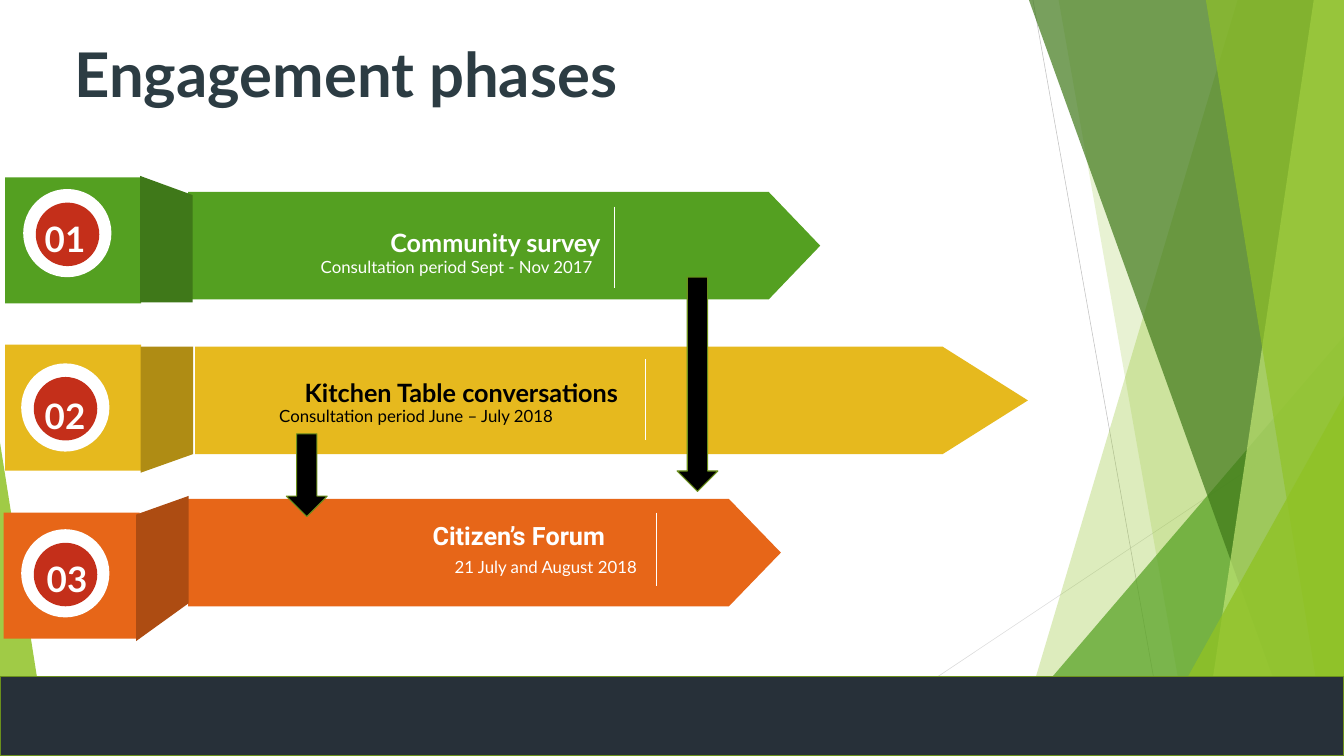
from lxml import etree
from pptx import Presentation
from pptx.dml.color import RGBColor
from pptx.enum.shapes import MSO_CONNECTOR, MSO_SHAPE
from pptx.enum.text import MSO_ANCHOR, PP_ALIGN
from pptx.oxml.ns import qn
from pptx.util import Inches, Pt

LINE = MSO_CONNECTOR.STRAIGHT
RECT, OVAL = MSO_SHAPE.RECTANGLE, MSO_SHAPE.OVAL
PEAK, DOWN = MSO_SHAPE.ISOSCELES_TRIANGLE, MSO_SHAPE.DOWN_ARROW
LEFT, MID, RIGHT = PP_ALIGN.LEFT, PP_ALIGN.CENTER, PP_ALIGN.RIGHT
TOP, CORE = MSO_ANCHOR.TOP, MSO_ANCHOR.MIDDLE

# The grid has cells of one inch: COLS across, ROWS down
COLS, ROWS = 26.66, 15
CELL = Inches(1)
WHITE, BLACK, RED = "FFFFFF", "000000", "C42F1A"
GREEN, LIME, MOSS, EDGE = "54A021", "90C226", "3F7819", "6B901C"
LEAD = 77.4
FLAT = (0, 0, 0, 0)
SLIM = (0.1, 0.05, 0.1, 0.05)


def grid(*cells):
    return [round(c * CELL) for c in cells]


def tint(color):
    return RGBColor.from_string(color)


def paint(shape, fill, alpha=100, edge=None):
    shape.shadow.inherit = False
    shape.fill.solid()
    shape.fill.fore_color.rgb = tint(fill)
    if alpha < 100:
        node = shape.fill._xPr.find(qn("a:solidFill"))[0]
        etree.SubElement(node, qn("a:alpha")).set("val", str(alpha * 1000))
    if edge:
        shape.line.color.rgb = tint(edge)
        shape.line.width = Pt(1.5)
    else:
        shape.line.fill.background()


def preset(slide, kind, box, fill, alpha=100, edge=None, adj=None):
    shape = slide.shapes.add_shape(kind, *grid(*box))
    if adj is not None:
        shape.adjustments[0] = adj
    paint(shape, fill, alpha, edge)


def shard(slide, points, fill, alpha=100):
    spots = [grid(*p) for p in points]
    form = slide.shapes.build_freeform(*spots[0], scale=1.0)
    form.add_line_segments(spots[1:], close=True)
    paint(form.convert_to_shape(), fill, alpha)


def rule(slide, start, end, color, width):
    line = slide.shapes.add_connector(LINE, *grid(*start, *end))
    line.line.color.rgb = tint(color)
    line.line.width = Pt(width)
    etree.SubElement(line._element.spPr, qn("a:effectLst"))


def label(slide, box, text, size, color=WHITE, bold=False, font="Lato",
          align=RIGHT, anchor=TOP, pads=SLIM, lead=None, wrap=True):
    frame = slide.shapes.add_textbox(*grid(*box)).text_frame
    frame.word_wrap = wrap
    frame.vertical_anchor = anchor
    (frame.margin_left, frame.margin_top,
     frame.margin_right, frame.margin_bottom) = grid(*pads)
    para = frame.paragraphs[0]
    para.alignment = align
    if lead:
        para.line_spacing = Pt(lead)
    run = para.add_run()
    run.text = text
    run.font.size, run.font.bold, run.font.name = Pt(size), bold, font
    run.font.color.rgb = tint(color)


def facets(slide, box):
    """Overlapping glassy shards on the right, one on the left."""
    x, y, w, h = box
    right, foot = x + w, y + h
    rule(slide, (x + 20.49, y), (x + 23.16, foot), "BFBFBF", 0.75)
    rule(slide, (right, y + 8.05), (x + 16.24, foot), "D9D9D9", 0.75)

    def slab(head, base, fill, alpha):
        shard(slide, [(x + head, y), (right, y), (right, foot),
                      (x + base, foot)], fill, alpha)

    def peak(wide, tall, fill, alpha):
        preset(slide, PEAK, (right - wide, foot - tall, wide, tall),
               fill, alpha, adj=1)

    slab(24.55, 20.08, LIME, 30)
    slab(21, 23.64, LIME, 20)
    peak(7.13, 8.33, GREEN, 72)
    slab(20.41, 25.81, MOSS, 70)
    slab(26.06, 23.83, "C0E474", 70)
    slab(23.92, 26.35, LIME, 65)
    peak(3.97, 7.15, LIME, 80)
    preset(slide, PEAK, (x, foot - 6.22, 0.98, 6.22), LIME, 85, adj=0)


def badge(slide, box, text, shift):
    """White ring, red disc and number."""
    x, y, w, h = box
    preset(slide, OVAL, box, WHITE)
    preset(slide, OVAL, (x + 0.25, y + 0.27, w - 0.49, h - 0.49), RED)
    label(slide, (x + shift[0], y + shift[1], 0.82, 1.01), text, 50, bold=True,
          align=MID, anchor=CORE, pads=FLAT, lead=LEAD, wrap=False)


def phase(slide, box, part):
    """Banner: block, fold, arrow, divider, badge and two labels."""
    x, y, w, h = box
    # Arrow
    left, top, wide, tip = part["arrow"]
    left, top, tall = x + left, y + top, 2.13
    end = left + wide
    shard(slide, [(left, top), (end - tip, top), (end, top + tall / 2),
                  (end - tip, top + tall), (left, top + tall)], part["fill"])
    # Block and fold; the fold's corners run clockwise from top left
    preset(slide, RECT, box, part["fill"])
    seam = x + part["seam"]
    sides = (seam, seam + 1.04, seam + 1.04, seam)
    shard(slide, [(s, y + d) for s, d in zip(sides, part["fold"])],
          part["shade"])
    # Divider
    at, head, foot = part["rule"]
    rule(slide, (x + at, y + head), (x + at, y + foot), WHITE, 1)
    # Badge
    dx, dy = part["ring"]
    badge(slide, (x + dx, y + dy, 1.75, 1.75), part["num"], part["shift"])
    # Labels
    for (dx, dy, wide, tall), text, size, style in part["text"]:
        label(slide, (x + dx, y + dy, wide, tall), text, size, **style)


HEAD = dict(bold=True, anchor=CORE, pads=FLAT, lead=LEAD)
PHASES = [
    ((0.1, 3.52, 2.7, 2.5), dict(
        num="01", fill=GREEN, shade=MOSS, arrow=(3.63, 0.29, 12.54, 1.02),
        seam=2.68, fold=(-0.03, 0.35, 2.48, 2.48), rule=(12.09, 0.58, 2.19),
        ring=(0.36, 0.23), shift=(0.42, 0.35), text=[
            ((4.2, 1.34, 7.77, 0.75), "Consultation period Sept - Nov 2017",
             24, dict(pads=(0.24, 0.12, 0.32, 0.12), lead=36.4)),
            ((7.3, 0.52, 4.51, 1.08), "Community survey", 36,
             dict(HEAD, wrap=False))])),
    ((0.1, 6.84, 2.7, 2.5), dict(
        num="02", fill="E6B91E", shade="AF8C14",
        arrow=(3.77, 0.04, 16.52, 1.69),
        seam=2.69, fold=(0.04, 0.04, 2.17, 2.54), rule=(12.7, 0.28, 1.89),
        ring=(0.32, 0.37), shift=(0.46, 0.41), text=[
            ((0.24, 0.23, 11.92, 0.95), "Kitchen Table conversations", 36,
             dict(HEAD, color=BLACK)),
            ((5.34, 1.16, 6.71, 0.5), "Consultation period June – July 2018",
             24, dict(color=BLACK, align=LEFT))])),
    ((0.07, 10.17, 2.7, 2.5), dict(
        num="03", fill="E76618", shade="AD4C12",
        arrow=(3.66, -0.27, 11.76, 1.03),
        seam=2.63, fold=(0.04, -0.33, 1.8, 2.55), rule=(12.95, 0, 1.46),
        ring=(0.35, 0.33), shift=(0.5, 0.35), text=[
            ((4.03, 0.1, 8.63, 0.71), "Citizen’s Forum", 36,
             dict(bold=True, font="Roboto", pads=(0.1, 0.05, 0.73, 0.05))),
            ((6.6, 0.82, 6.06, 0.5), "21 July and August 2018", 24, {})])),
]


def main():
    deck = Presentation()
    deck.slide_width, deck.slide_height = grid(COLS, ROWS)
    slide = deck.slides.add_slide(deck.slide_layouts[6])
    # Backdrop and footer band
    facets(slide, (0, 0, COLS, ROWS))
    preset(slide, RECT, (0, ROWS - 1.57, COLS, 1.57), "273039", edge=EDGE)
    # Title
    label(slide, (0.7, 0.66, 12.32, 1.58), "Engagement phases", 88, "2C3C43",
          bold=True, align=MID, wrap=False)
    # Phases
    for box, part in PHASES:
        phase(slide, box, part)
    # Arrows leading to the forum
    for x, y, tall in ((13.43, 5.5, 4.25), (5.68, 8.61, 1.64)):
        preset(slide, DOWN, (x, y, 0.81, tall), BLACK, edge=EDGE)
    deck.save("out.pptx")


if __name__ == "__main__":
    main()
